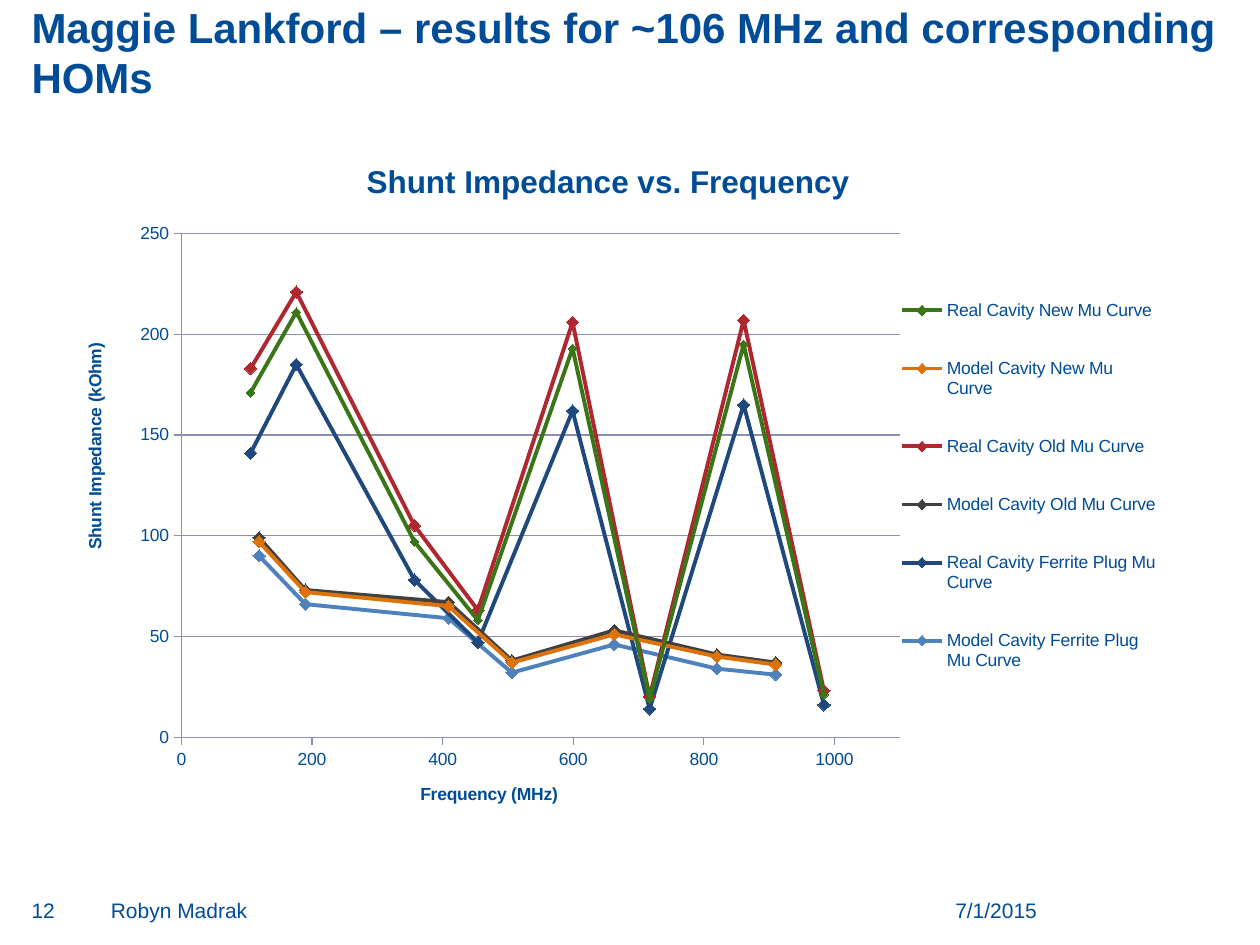
"""Build the shunt impedance versus frequency slide."""
from lxml.etree import SubElement
from pptx import Presentation
from pptx.chart.data import XyChartData
from pptx.dml.color import RGBColor
from pptx.enum.chart import XL_CHART_TYPE, XL_LEGEND_POSITION, XL_MARKER_STYLE, XL_TICK_MARK
from pptx.enum.text import MSO_ANCHOR, PP_ALIGN
from pptx.oxml.ns import qn
from pptx.util import Inches, Pt

BLUE, GRID = "004C97", "8A8FB5"
TITLE = "Maggie Lankford – results for ~106 MHz and corresponding HOMs"
FOOTERS = [
    ("7/1/2015", 7.05, 1.18, PP_ALIGN.RIGHT),
    ("Robyn Madrak", 0.88, 5.88, PP_ALIGN.LEFT),
    ("12", 0.25, 0.49, PP_ALIGN.LEFT),
]
REAL = [106, 176, 357, 454, 599, 717, 861, 984]
MODEL = [119, 190, 409, 506, 663, 820, 910]
SERIES = [
    ("Real Cavity New Mu Curve", REAL, [171, 211, 97, 58, 193, 19, 195, 21], "3A7518", 5),
    ("Model Cavity New Mu Curve", MODEL, [97, 72, 65, 37, 51, 40, 36], "DB720C", 7),
    ("Real Cavity Old Mu Curve", REAL, [183, 221, 105, 63, 206, 20, 207, 23], "AF272F", 7),
    ("Model Cavity Old Mu Curve", MODEL, [99, 73, 67, 38, 53, 41, 37], "404040", 7),
    ("Real Cavity Ferrite Plug Mu Curve", REAL, [141, 185, 78, 47, 162, 14, 165, 16], "1F497D", 7),
    ("Model Cavity Ferrite Plug Mu Curve", MODEL, [90, 66, 59, 32, 46, 34, 31], "4F81BD", 7),
]
AXES = [
    ("category_axis", "Frequency (MHz)", (0.33, 0.92),
     dict(minimum_scale=0, maximum_scale=1100, major_unit=200, has_major_gridlines=False)),
    ("value_axis", "Shunt Impedance (kOhm)", (0.03, 0.3),
     dict(minimum_scale=0, maximum_scale=250, major_unit=50, has_major_gridlines=True)),
]


def rgb(value):
    """Turn a hex string into a colour."""
    return RGBColor.from_string(value)


def set_all(obj, values):
    """Set each attribute named in a dict."""
    for name, value in values.items():
        setattr(obj, name, value)


def style_font(font, size, bold=False):
    """Apply the slide's typeface and colour."""
    set_all(font, dict(name="Arial", size=Pt(size), bold=bold))
    font.color.rgb = rgb(BLUE)


def style_line(line, color, width):
    """Give a line its colour and width."""
    line.color.rgb = rgb(color)
    line.width = Pt(width)


def fill_text(shape, text, size, align, anchor, bold=False):
    """Write one paragraph into a frame without margins."""
    tf = shape.text_frame
    set_all(tf, dict(margin_left=0, margin_right=0, margin_top=0, margin_bottom=0,
                     word_wrap=True, vertical_anchor=anchor))
    p = tf.paragraphs[0]
    p.alignment = align
    r = p.add_run()
    r.text = text
    style_font(r.font, size, bold)


def place(element, index, fractions, inner=False):
    """Set a manual layout as fractions of the chart area."""
    for old in element.findall(qn("c:layout")):
        element.remove(old)
    layout = SubElement(element, qn("c:layout"))
    element.insert(index, layout)
    manual = SubElement(layout, qn("c:manualLayout"))
    values = [("layoutTarget", "inner")] if inner else []
    values += [("xMode", "edge"), ("yMode", "edge")] + list(zip("xywh", fractions))
    for tag, value in values:
        SubElement(manual, qn("c:" + tag)).set("val", str(value))


def add_heading(title, text, size, position):
    """Write and place a chart or axis title."""
    r = title.text_frame.paragraphs[0].add_run()
    r.text = text
    style_font(r.font, size, True)
    place(title._element, 1, position)


def add_impedance_chart(s):
    """Add the scatter chart with its axes and legend."""
    data = XyChartData()
    for name, xs, ys, _, _ in SERIES:
        series = data.add_series(name)
        for x, y in zip(xs, ys):
            series.add_data_point(x, y)
    box = [Inches(v) for v in (0.37, 1.01, 8.91, 5.63)]
    chart = s.shapes.add_chart(XL_CHART_TYPE.XY_SCATTER_LINES, *box, data).chart
    style_font(chart.font, 10)
    chart.has_title = True
    add_heading(chart.chart_title, "Shunt Impedance vs. Frequency", 18, (0.28, 0.04))
    chart.plots[0].vary_by_categories = False
    place(chart._chartSpace.chart.plotArea, 0, (0.12, 0.15, 0.64, 0.71), True)

    for axis_name, text, position, scale in AXES:
        axis = getattr(chart, axis_name)
        set_all(axis, dict(scale, has_title=True, major_tick_mark=XL_TICK_MARK.OUTSIDE,
                           minor_tick_mark=XL_TICK_MARK.NONE))
        add_heading(axis.axis_title, text, 10, position)
        style_font(axis.tick_labels.font, 10)
        style_line(axis.format.line, GRID, 0.75)
        if axis.has_major_gridlines:
            style_line(axis.major_gridlines.format.line, GRID, 0.75)

    for series, (_, _, _, color, size) in zip(chart.plots[0].series, SERIES):
        series.smooth = False
        style_line(series.format.line, color, 2.25)
        set_all(series.marker, dict(style=XL_MARKER_STYLE.DIAMOND, size=size))
        series.marker.format.fill.solid()
        series.marker.format.fill.fore_color.rgb = rgb(color)
        style_line(series.marker.format.line, color, 0.75)

    chart.has_legend = True
    set_all(chart.legend, dict(position=XL_LEGEND_POSITION.RIGHT, include_in_layout=False))
    style_font(chart.legend.font, 10)
    place(chart.legend._element, 1, (0.76, 0.19, 0.23, 0.63))


def main():
    """Build and save the slide."""
    prs = Presentation()
    set_all(prs, dict(slide_width=Inches(10), slide_height=Inches(7.5)))
    s = prs.slides.add_slide(prs.slide_layouts[5])
    title = s.shapes.title
    set_all(title, dict(left=Inches(0.25), top=Inches(0.11), width=Inches(9.5), height=Inches(0.7)))
    fill_text(title, TITLE, 24, PP_ALIGN.LEFT, MSO_ANCHOR.BOTTOM, True)
    for text, left, width, align in FOOTERS:
        sp = s.shapes.add_textbox(Inches(left), Inches(7.12), Inches(width), Inches(0.26))
        fill_text(sp, text, 12, align, MSO_ANCHOR.TOP)
    add_impedance_chart(s)
    prs.save("out.pptx")


if __name__ == "__main__":
    main()
